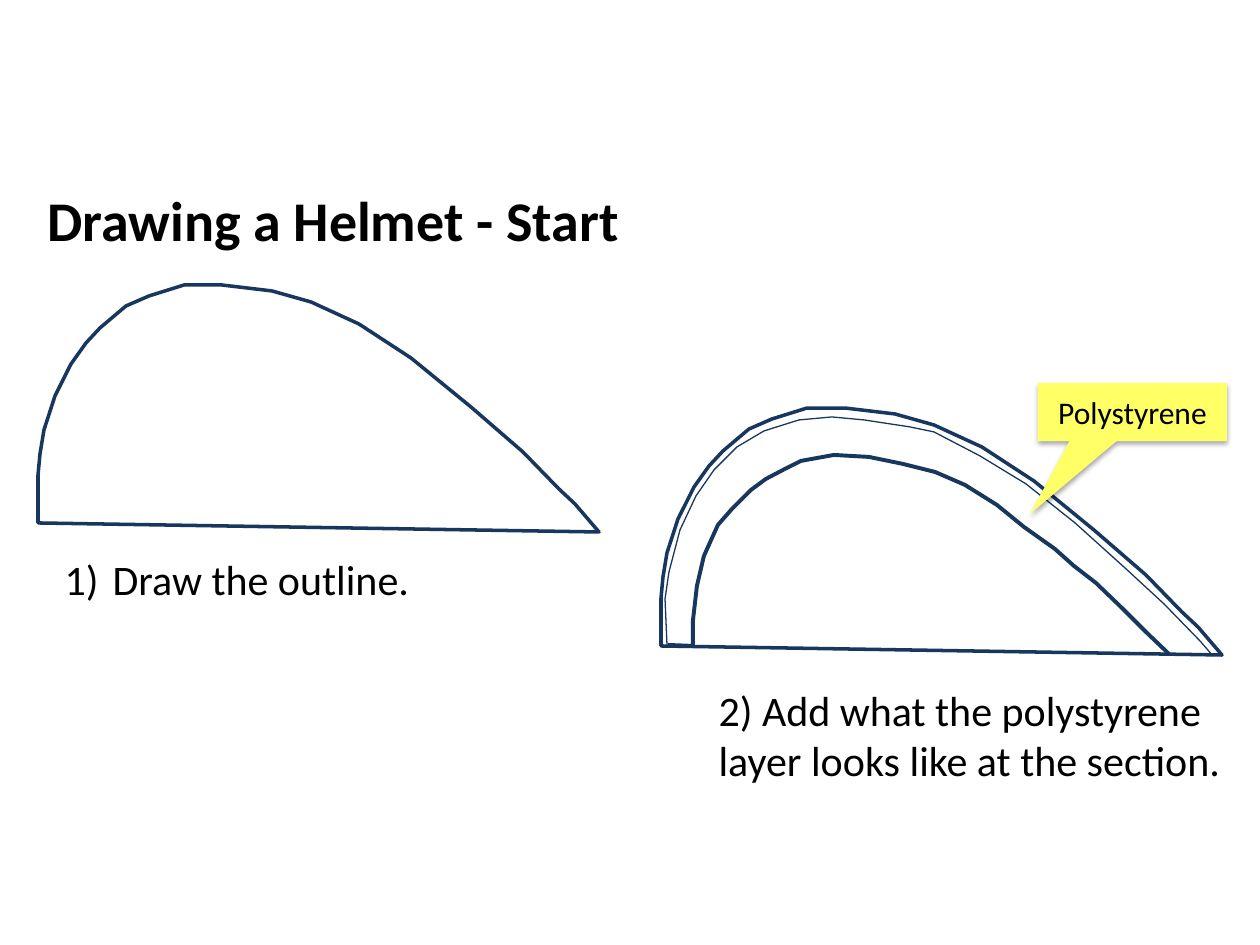
from lxml import etree
from pptx import Presentation
from pptx.dml.color import RGBColor
from pptx.enum.shapes import MSO_SHAPE
from pptx.enum.text import MSO_ANCHOR, MSO_AUTO_SIZE, PP_ALIGN
from pptx.oxml.ns import qn
from pptx.util import Pt

CALLOUT = MSO_SHAPE.RECTANGULAR_CALLOUT
TOP, MIDDLE = MSO_ANCHOR.TOP, MSO_ANCHOR.MIDDLE
LEFT, CENTER = PP_ALIGN.LEFT, PP_ALIGN.CENTER
FIXED = MSO_AUTO_SIZE.NONE
SCALE = 914400 / 126
COLORS = {"ink": "000000", "navy": "17375E", "paper": "FFFFFF", "note": "FFFF66"}

OUTLINE = [
    (38, 495), (38, 475), (40, 454), (44, 430), (55, 396), (71, 364),
    (86, 343), (100, 328), (126, 306), (149, 296), (184, 285), (222, 285),
    (272, 291), (311, 302), (359, 324), (411, 358), (471, 407), (523, 452),
    (559, 489), (575, 504), (599, 532), (38, 523),
]
SHELL = [
    (667, 645), (665, 599), (669, 572), (680, 530), (696, 496), (714, 470),
    (737, 447), (764, 431), (799, 420), (832, 417), (864, 420), (910, 427),
    (934, 432), (980, 456), (1026, 484), (1075, 523), (1125, 568),
    (1164, 604), (1200, 641), (1213, 656),
]
LINER = [
    (668, 645), (693, 646), (693, 621), (697, 586), (704, 556), (718, 525),
    (732, 509), (751, 490), (766, 479), (785, 469), (801, 461), (834, 455),
    (869, 457), (903, 464), (935, 472), (965, 485), (997, 505), (1024, 527),
    (1055, 549), (1074, 566), (1096, 583), (1123, 609), (1147, 633), (1169, 654),
]


def px(n):
    return round(n * SCALE)


def color(name):
    return RGBColor.from_string(COLORS[name])


class Deck:
    """Holds the text style and the slide being built."""

    def __init__(self, wide, high):
        self.font = "Calibri"
        self.file = Presentation()
        self.file.slide_width, self.file.slide_height = px(wide), px(high)
        self.slide = self.file.slides.add_slide(self.file.slide_layouts[3])

    def label(self, shape, text, size, bold=False, align=LEFT, anchor=TOP):
        frame = shape.text_frame
        frame.word_wrap, frame.auto_size = True, FIXED
        frame.vertical_anchor = anchor
        para = frame.paragraphs[0]
        para.text, para.alignment = text, align
        para.space_before = Pt(0)
        font = para.font
        font.name, font.size, font.bold = self.font, Pt(size), bold
        font.color.rgb = color("ink")
        return para

    def place(self, index, box):
        shape = self.slide.placeholders[index]
        shape.left, shape.top, shape.width, shape.height = map(px, box)
        return shape

    def title(self, box, text):
        self.label(self.place(0, box), text, 32, bold=True)

    def step(self, index, box, text, indent=0):
        shape = self.place(index, box)
        props = shape.text_frame.paragraphs[0]._p.get_or_add_pPr()
        props.set("marL", str(px(indent)))
        props.set("indent", str(-px(indent)))
        if indent:
            etree.SubElement(props, qn("a:buFont"), typeface="+mj-lt")
            etree.SubElement(props, qn("a:buAutoNum"), type="arabicParenR")
        else:
            etree.SubElement(props, qn("a:buNone"))
        self.label(shape, text, 24).space_after = Pt(6)

    def curve(self, shapes, points, width, closed=False):
        trace = shapes.build_freeform(*points[0], scale=SCALE)
        trace.add_line_segments(points[1:], close=closed)
        shape = trace.convert_to_shape()
        shape.shadow.inherit = False
        if closed:
            shape.fill.solid()
            shape.fill.fore_color.rgb = color("paper")
        else:
            shape.fill.background()
        shape.line.color.rgb = color("navy")
        shape.line.width = Pt(width)

    def callout(self, box, text, tip):
        shape = self.slide.shapes.add_shape(CALLOUT, *map(px, box))
        shape.adjustments[0], shape.adjustments[1] = tip
        shape.fill.solid()
        shape.fill.fore_color.rgb = color("note")
        shape.line.fill.background()
        shape.shadow.inherit = False
        effects = shape._element.spPr.find(qn("a:effectLst"))
        shade = etree.SubElement(
            effects, qn("a:outerShdw"), blurRad=str(Pt(3.1)),
            dist=str(Pt(1.8)), dir="5400000", rotWithShape="0")
        tint = etree.SubElement(shade, qn("a:srgbClr"), val=COLORS["ink"])
        etree.SubElement(tint, qn("a:alpha"), val="35000")
        self.label(shape, text, 18, align=CENTER, anchor=MIDDLE)


def main():
    deck = Deck(1260, 945)
    deck.title((35, 179, 893, 81), "Drawing a Helmet - Start")
    deck.step(2, (706, 678, 561, 115),
              "2) Add what the polystyrene layer looks like at the section.")
    deck.curve(deck.slide.shapes, OUTLINE, 2, closed=True)
    group = deck.slide.shapes.add_group_shape().shapes
    deck.curve(group, [(x + 623, y + 123) for x, y in OUTLINE], 2, closed=True)
    deck.curve(group, SHELL, 0.75)
    deck.curve(group, LINER, 2.25)
    deck.step(1, (52, 547, 1220, 63), "Draw the outline.", indent=48)
    deck.callout((1038, 383, 189, 58), "Polystyrene", (-0.54, 1.75))
    deck.file.save("out.pptx")


if __name__ == "__main__":
    main()
